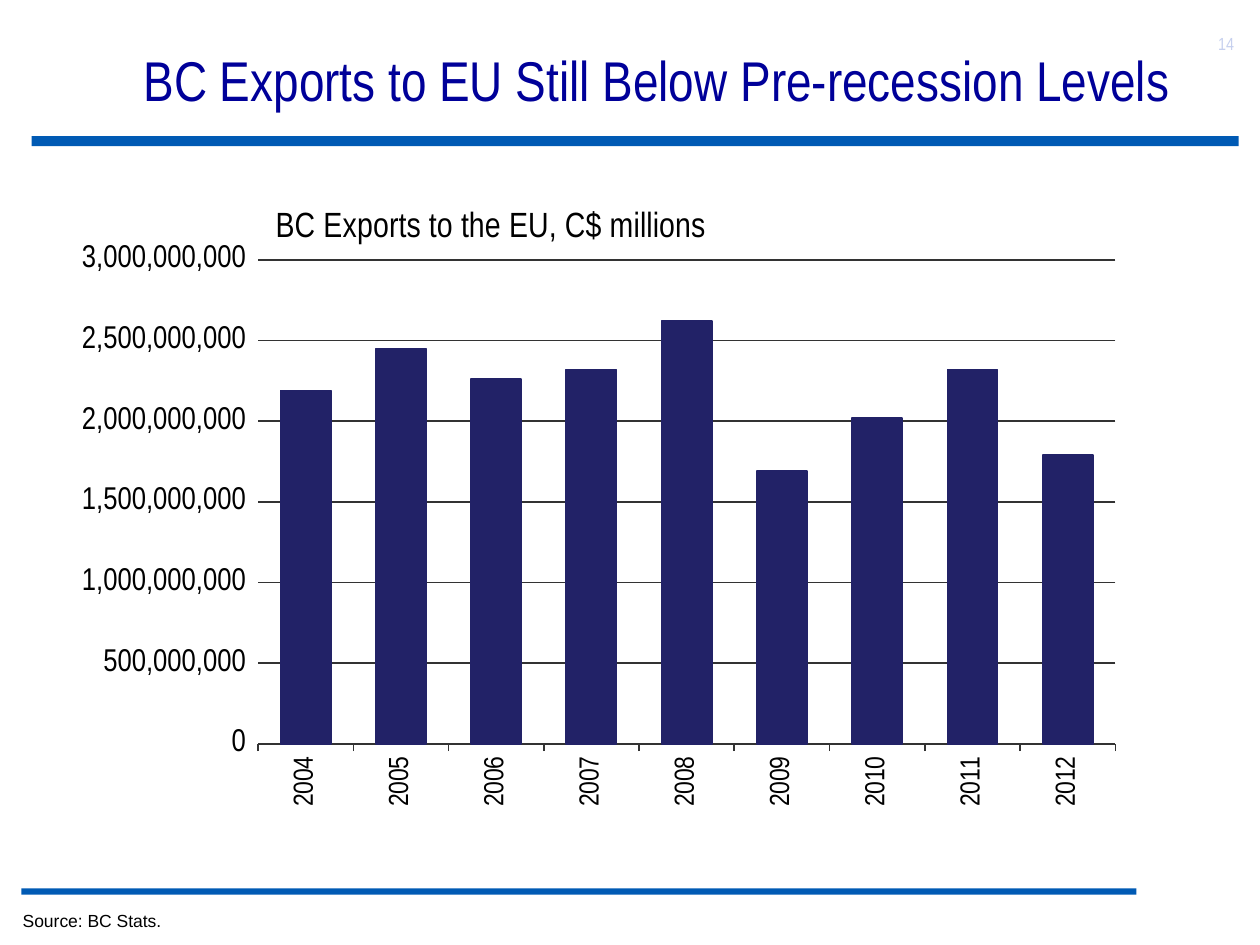
import pptx
import pptx.util
import pptx.chart.data
import pptx.dml.color
import pptx.enum.chart
import pptx.enum.shapes
import pptx.enum.text
import pptx.oxml
import pptx.oxml.ns

rgb = pptx.dml.color.RGBColor.from_string
qn = pptx.oxml.ns.qn
Pt = pptx.util.Pt

THEME = {
    "narrow": "Arial Narrow", "plain": "Arial",
    "rule": rgb("005AB4"), "heading": rgb("000099"), "ink": rgb("000000"),
    "page": rgb("C6D0EE"), "column": rgb("222267"), "grid": rgb("333333"),
    "heading_size": Pt(32), "chart_title_size": Pt(20),
    "value_size": Pt(18), "year_size": Pt(16), "small_size": Pt(10),
    "line": Pt(0.95),
}

deck = pptx.Presentation()
deck.slide_width = pptx.util.Inches(10)
deck.slide_height = pptx.util.Inches(7.5)
slide = deck.slides.add_slide(deck.slide_layouts[6])

# The grid has 1000 columns and 750 rows
COLUMN = deck.slide_width // 1000
ROW = deck.slide_height // 750


def area(left, top, width, height):
    return left * COLUMN, top * ROW, width * COLUMN, height * ROW


def set_layout(parent, position, **shares):
    """Place a chart part by shares of the chart's size."""
    for old in parent.findall(qn("c:layout")):
        parent.remove(old)
    inner = '<c:layoutTarget val="inner"/>' if "w" in shares else ""
    modes = "".join(f'<c:{k}Mode val="edge"/>' for k in "xy")
    sizes = "".join(f'<c:{k} val="{v}"/>' for k, v in shares.items())
    parent.insert(position, pptx.oxml.parse_xml(
        f'<c:layout {pptx.oxml.ns.nsdecls("c")}><c:manualLayout>'
        f"{inner}{modes}{sizes}</c:manualLayout></c:layout>"))


# Rules under the heading and above the source
for place in [(25, 108, 958, 8), (17, 705, 885, 5)]:
    rule = slide.shapes.add_shape(
        pptx.enum.shapes.MSO_SHAPE.RECTANGLE, *area(*place))
    rule.shadow.inherit = False
    rule.fill.solid()
    rule.fill.fore_color.rgb = THEME["rule"]
    rule.line.fill.background()

# Heading, source and page number
LEFT, CENTER = pptx.enum.text.PP_ALIGN.LEFT, pptx.enum.text.PP_ALIGN.CENTER
TOP, MIDDLE = pptx.enum.text.MSO_ANCHOR.TOP, pptx.enum.text.MSO_ANCHOR.MIDDLE
for words, place, inset, font, size, color, align, anchor in [
    ("BC Exports to EU Still Below Pre-recession Levels", (67, 17, 909, 92), 10,
     "narrow", "heading_size", "heading", CENTER, MIDDLE),
    ("Source: BC Stats.", (0, 717, 682, 27), 18,
     "plain", "small_size", "ink", LEFT, TOP),
    ("14", (957, 21, 43, 50), 10,
     "narrow", "small_size", "page", LEFT, TOP),
]:
    frame = slide.shapes.add_textbox(*area(*place)).text_frame
    frame.word_wrap = True
    frame.margin_left = inset * COLUMN
    frame.vertical_anchor = anchor
    paragraph = frame.paragraphs[0]
    paragraph.alignment = align
    run = paragraph.add_run()
    run.text = words
    run.font.name = THEME[font]
    run.font.size = THEME[size]
    run.font.color.rgb = THEME[color]

# Export values by year
exports = pptx.chart.data.CategoryChartData(number_format="#,##0")
exports.categories = [str(year) for year in range(2004, 2013)]
millions = [2190, 2450, 2260, 2320, 2620, 1690, 2020, 2320, 1790]
exports.add_series("Series 1", [value * 1_000_000 for value in millions])
chart = slide.shapes.add_chart(
    pptx.enum.chart.XL_CHART_TYPE.COLUMN_CLUSTERED,
    *area(65, 144, 891, 519), exports).chart
chart.has_legend = False
chart.font.name = THEME["narrow"]
chart.font.color.rgb = THEME["ink"]

# Chart title
chart.has_title = True
title_run = chart.chart_title.text_frame.paragraphs[0].add_run()
title_run.text = "BC Exports to the EU, C$ millions"
title_run.font.name = THEME["narrow"]
title_run.font.size = THEME["chart_title_size"]
title_run.font.bold = False
title_run.font.color.rgb = THEME["ink"]
set_layout(chart.chart_title.element, 1, x=0.16, y=0.03)
plot_area = chart.element.find(qn("c:chart")).find(qn("c:plotArea"))
set_layout(plot_area, 0, x=0.15, y=0.12, w=0.77, h=0.74)

# Columns
plot = chart.plots[0]
plot.gap_width = 90
plot.vary_by_categories = False
columns = plot.series[0]
columns.invert_if_negative = False
columns.format.fill.solid()
columns.format.fill.fore_color.rgb = THEME["column"]
columns.format.line.color.rgb = THEME["column"]
columns.format.line.width = Pt(1)

# Axes
years, dollars = chart.category_axis, chart.value_axis
for axis, size in [(years, "year_size"), (dollars, "value_size")]:
    axis.major_tick_mark = pptx.enum.chart.XL_TICK_MARK.OUTSIDE
    axis.minor_tick_mark = pptx.enum.chart.XL_TICK_MARK.NONE
    font = axis.tick_labels.font
    font.name = THEME["narrow"]
    font.size = THEME[size]
    font.bold = False
    font.color.rgb = THEME["ink"]
years.tick_label_position = pptx.enum.chart.XL_TICK_LABEL_POSITION.LOW
year_labels = plot_area.find(qn("c:catAx")).find(qn("c:txPr"))
year_labels.find(qn("a:bodyPr")).set("rot", "-5400000")

dollars.minimum_scale, dollars.maximum_scale = 0, 3_000_000_000
dollars.major_unit = 500_000_000
dollars.tick_labels.number_format = "#,##0"
dollars.tick_labels.number_format_is_linked = False
dollars.has_major_gridlines = True
dollars.format.line.fill.background()
for line in [years.format.line, dollars.major_gridlines.format.line]:
    line.color.rgb = THEME["grid"]
    line.width = THEME["line"]

deck.save("out.pptx")
